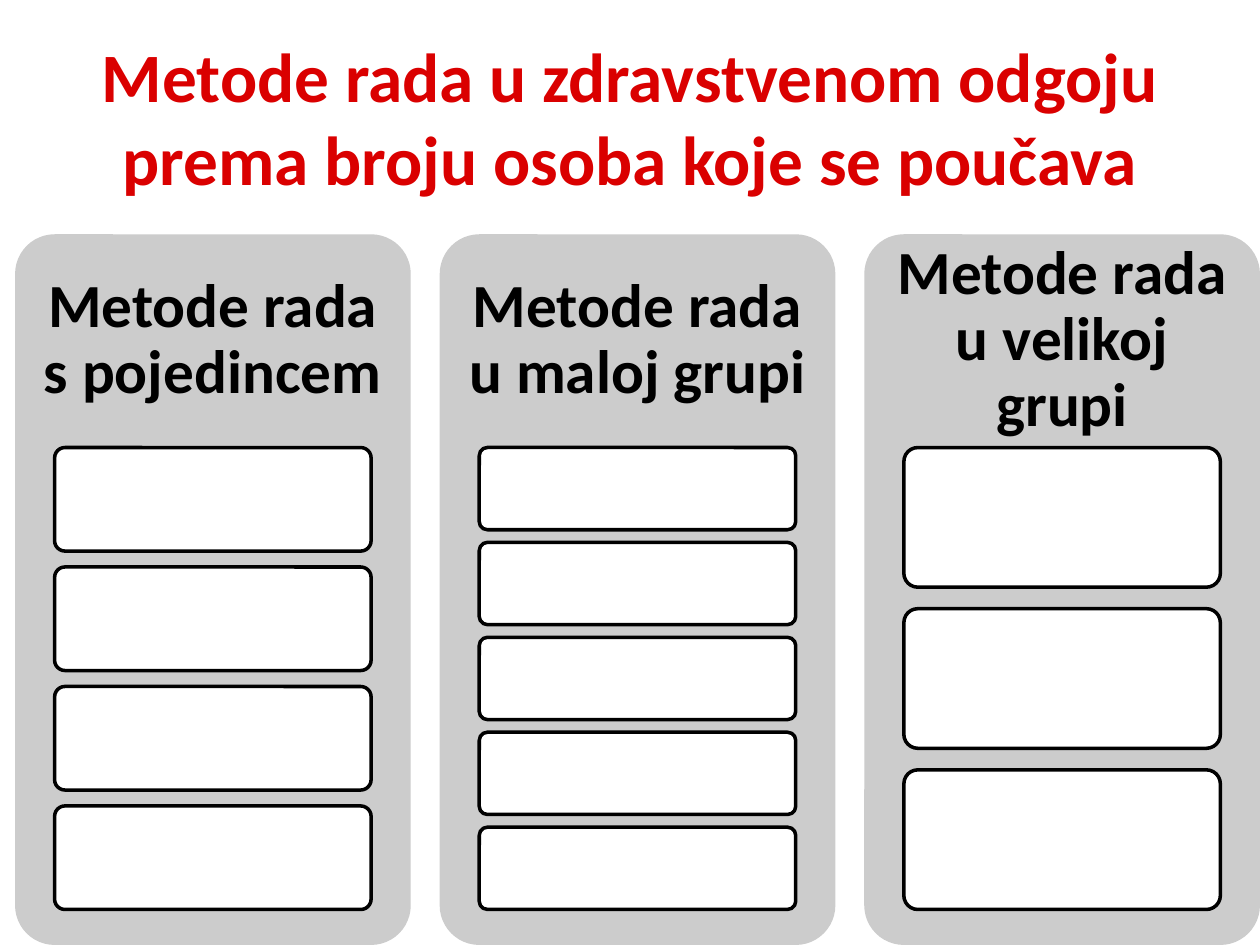
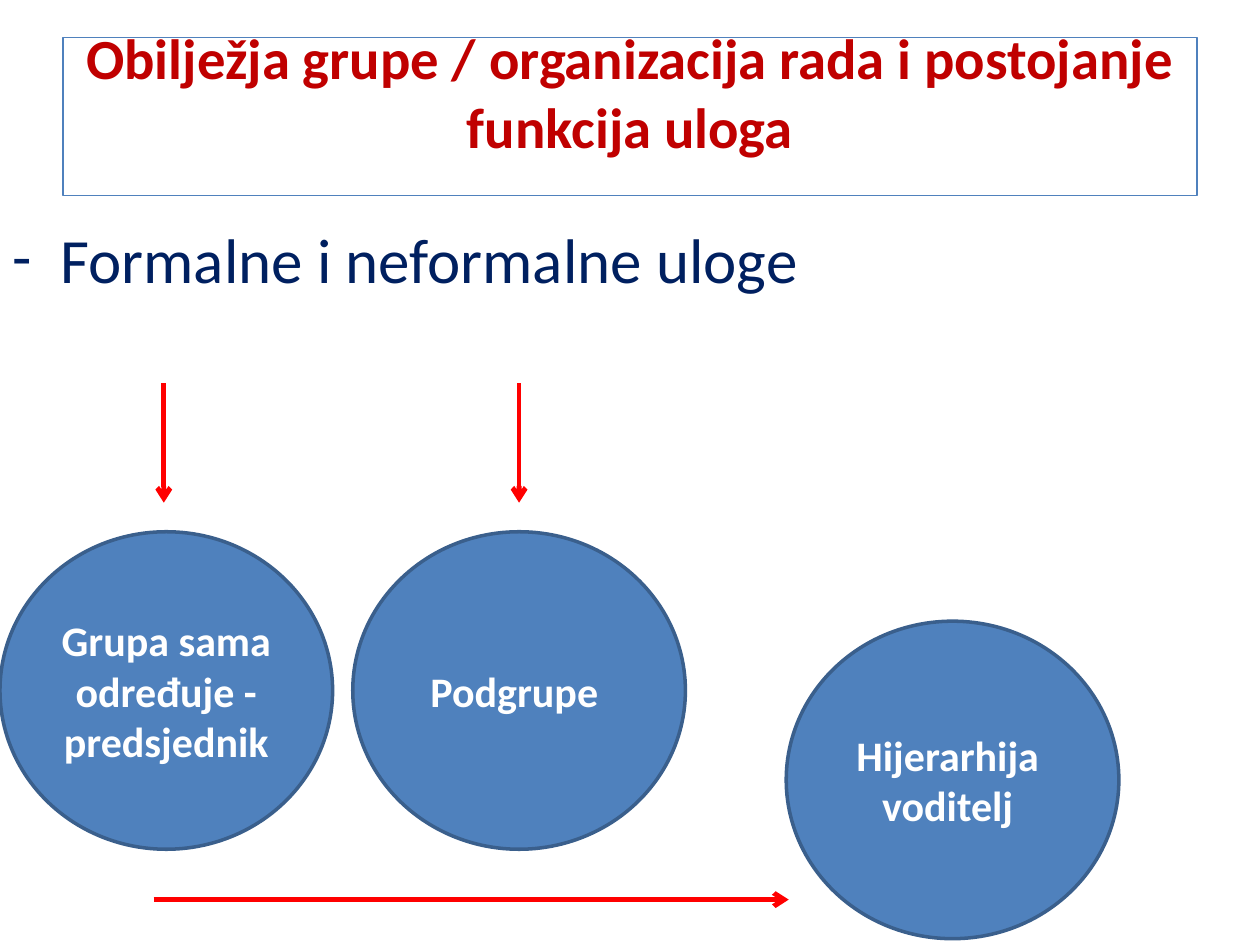
import pptx
import pptx.util
import pptx.dml.color
import pptx.enum.shapes
import pptx.enum.text
import pptx.oxml.xmlchemy
from pptx.oxml.ns import qn
from lxml import etree

RGB = pptx.dml.color.RGBColor
SHAPE = pptx.enum.shapes.MSO_SHAPE
ALIGN = pptx.enum.text.PP_ALIGN
ANCHOR = pptx.enum.text.MSO_ANCHOR

RED = RGB(0xDA, 0x00, 0x00)
DARK_RED = RGB(0xC0, 0x00, 0x00)
ARROW = RGB(0xFF, 0x00, 0x00)
NAVY = RGB(0x00, 0x20, 0x60)
BLUE = RGB(0x4F, 0x81, 0xBD)
EDGE = RGB(0x3A, 0x5F, 0x8C)
GREY = RGB(0xCC, 0xCC, 0xCC)
BLACK = RGB(0x00, 0x00, 0x00)
WHITE = RGB(0xFF, 0xFF, 0xFF)

FONT = "Calibri"
WIDTH, HEIGHT = pptx.util.Inches(10), pptx.util.Inches(7.5)
COLS, ROWS = 100, 75
TITLE = (5, 3, 90, 12.5)
PANELS = (1.2, 18.6, 98.8, 56.4)
BODY = (0, 17, 100, 58)

GROUPS = [
    ("Metode rada s pojedincem", 4),
    ("Metode rada u maloj grupi", 5),
    ("Metode rada u velikoj grupi", 3),
]
ROLES = [
    (0, 25.2, ["Grupa sama određuje - predsjednik"]),
    (28, 25.2, ["Podgrupe "]),
    (62.4, 32.3, ["Hijerarhija ", "voditelj "]),
]
ARROWS = [(13, 13.4, 13, 22.9), (41.2, 13.4, 41.2, 22.9), (12.2, 54.4, 62.6, 54.4)]


def grid(x, y, w, h):
    return (int(x * WIDTH / COLS), int(y * HEIGHT / ROWS),
            int(w * WIDTH / COLS), int(h * HEIGHT / ROWS))


def write(shape, *lines, size, color, bold=True, align=ALIGN.CENTER,
          anchor=ANCHOR.MIDDLE, space=None, inset=None):
    frame = shape.text_frame
    frame.word_wrap = True
    frame.auto_size = pptx.enum.text.MSO_AUTO_SIZE.NONE
    frame.vertical_anchor = anchor
    if inset is not None:
        frame.margin_left = frame.margin_right = pptx.util.Inches(inset)
        frame.margin_top = frame.margin_bottom = pptx.util.Inches(inset)
    for i, line in enumerate(lines):
        para = frame.add_paragraph() if i else frame.paragraphs[0]
        para.alignment = align
        if space:
            para.line_spacing = space
        run = para.add_run()
        run.text = line
        run.font.name = FONT
        run.font.size = pptx.util.Pt(size)
        run.font.bold = bold
        run.font.color.rgb = color
    return frame


def move(shape, box):
    shape.left, shape.top, shape.width, shape.height = grid(*box)
    return shape


def draw(slide, kind, box, fill, edge=None):
    shape = slide.shapes.add_shape(kind, *grid(*box))
    shape.shadow.inherit = False
    shape.fill.solid()
    shape.fill.fore_color.rgb = fill
    if edge is None:
        shape.line.fill.background()
    else:
        shape.line.color.rgb = edge
        shape.line.width = pptx.util.Pt(2)
    if kind == SHAPE.ROUNDED_RECTANGLE:
        shape.adjustments[0] = 0.1
    return shape


def head(slide, text, size, color):
    title = move(slide.shapes.title, TITLE)
    write(title, text, size=size, color=color)
    return title


def arrow(slide, x1, y1, x2, y2):
    left, top, right, end = grid(x1, y1, x2, y2)
    line = slide.shapes.add_connector(
        pptx.enum.shapes.MSO_CONNECTOR.STRAIGHT, left, top, right, end)
    line.line.color.rgb = ARROW
    line.line.width = pptx.util.Pt(2.75)
    etree.SubElement(line.line._get_or_add_ln(), qn("a:tailEnd"), type="arrow")
    etree.SubElement(line._element.spPr, qn("a:effectLst"))


def panel(slide, box, text, count):
    x, y, w, h = box
    draw(slide, SHAPE.ROUNDED_RECTANGLE, box, GREY)
    top = 0.3 * h
    label = slide.shapes.add_textbox(*grid(x, y, w, top))
    write(label, text, size=35, color=BLACK, space=0.9, inset=0.15)
    gap = 0.154
    tall = 0.65 * h / (count + gap * (count - 1))
    for i in range(count):
        cell = (x + 0.1 * w, y + top + i * tall * (1 + gap), 0.8 * w, tall)
        draw(slide, SHAPE.ROUNDED_RECTANGLE, cell, WHITE, BLACK)


def panels(slide, box):
    x, y, w, h = box
    gap = 2.3
    wide = (w - gap * (len(GROUPS) - 1)) / len(GROUPS)
    for i, (text, count) in enumerate(GROUPS):
        panel(slide, (x + i * (wide + gap), y, wide, h), text, count)


def bullet(slide, box, text):
    body = move(slide.placeholders[1], box)
    frame = write(body, text, size=36, color=NAVY, bold=False,
                  align=ALIGN.LEFT, anchor=ANCHOR.TOP)
    props = frame.paragraphs[0]._p.get_or_add_pPr()
    indent = pptx.util.Inches(0.38)
    props.set("marL", str(indent))
    props.set("indent", str(-indent))
    etree.SubElement(props, qn("a:buFont"), typeface=FONT)
    etree.SubElement(props, qn("a:buChar"), char="-")


def roles(slide, box):
    x, y = box[:2]
    for x1, y1, x2, y2 in ARROWS:
        arrow(slide, x + x1, y + y1, x + x2, y + y2)
    for left, top, lines in ROLES:
        disc = draw(slide, SHAPE.OVAL, (x + left, y + top, 26.4, 25.2), BLUE, EDGE)
        write(disc, *lines, size=24, color=WHITE)


def methods(deck):
    slide = deck.slides.add_slide(deck.slide_layouts[5])
    head(slide, "Metode rada u zdravstvenom odgoju prema broju osoba koje se poučava",
         39.6, RED)
    panels(slide, PANELS)


def traits(deck):
    slide = deck.slides.add_slide(deck.slide_layouts[1])
    title = head(slide, "Obilježja grupe / organizacija rada i postojanje funkcija uloga",
                 32.4, DARK_RED)
    title.text_frame.margin_top = 0
    title.text_frame.margin_bottom = pptx.util.Inches(0.4)
    title.line.color.rgb = BLUE
    title.line.width = pptx.util.Pt(0.75)
    bullet(slide, BODY, "Formalne i neformalne uloge")
    roles(slide, BODY)


def main():
    deck = pptx.Presentation()
    deck.slide_width, deck.slide_height = WIDTH, HEIGHT
    methods(deck)
    traits(deck)
    deck.save("out.pptx")


if __name__ == "__main__":
    main()
